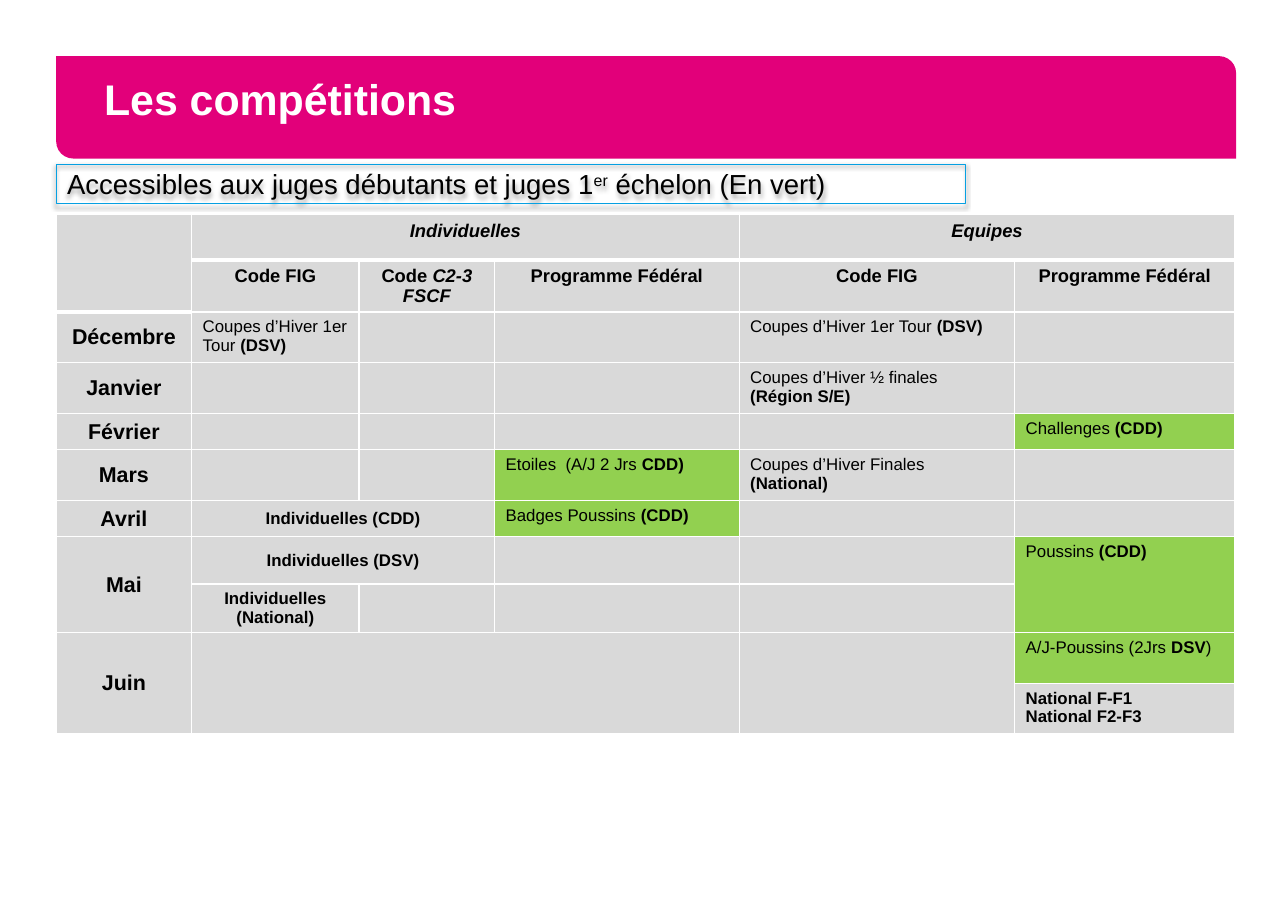
from dataclasses import dataclass

from lxml import etree
from pptx import Presentation
from pptx.dml.color import RGBColor
from pptx.enum import shapes, text
from pptx.oxml import ns
from pptx.util import Inches, Pt


@dataclass(frozen=True)
class Theme:
    font: str = "Arial"
    pink: str = "E2007A"
    blue: str = "06A0E2"
    grey: str = "D9D9D9"
    green: str = "92D050"
    white: str = "FFFFFF"
    black: str = "000000"
    title: int = 28
    subtitle: int = 18
    month: int = 14
    heading: int = 12
    event: int = 11


theme = Theme()


def add_run(paragraph, words, size, color=theme.black, style=""):
    """Add one run; style holds b for bold, i for italic, ^ for superscript."""
    run = paragraph.add_run()
    run.text = words
    font = run.font
    font.name, font.size = theme.font, Pt(size)
    font.bold, font.italic = "b" in style, "i" in style
    font.color.rgb = RGBColor.from_string(color)
    if "^" in style:
        font._element.set("baseline", "30000")


def add_color(parent, tag, color, **attributes):
    """Add a child element to parent and put a colour inside it."""
    element = etree.SubElement(parent, ns.qn(tag), attributes)
    holder = element if tag == "a:outerShdw" else etree.SubElement(element, ns.qn("a:solidFill"))
    return etree.SubElement(holder, ns.qn("a:srgbClr"), val=color)


presentation = Presentation()
presentation.slide_width = Inches(11.69)
presentation.slide_height = Inches(8.27)
slide = presentation.slides.add_slide(presentation.slide_layouts[6])
left, width = Inches(0.51), Inches(10.71)

# Title banner
banner = slide.shapes.add_shape(
    shapes.MSO_SHAPE.ROUND_2_DIAG_RECTANGLE, left, Inches(0.51), width, Inches(0.93))
banner.adjustments[0], banner.adjustments[1] = 0, 0.167
banner.shadow.inherit = False
banner.fill.solid()
banner.fill.fore_color.rgb = RGBColor.from_string(theme.pink)
banner.line.fill.background()
frame = banner.text_frame
frame.word_wrap = True
frame.vertical_anchor = text.MSO_ANCHOR.MIDDLE
frame.margin_left = frame.margin_right = Inches(0.39)
paragraph = frame.paragraphs[0]
paragraph.alignment = text.PP_ALIGN.LEFT
paragraph.line_spacing = Pt(22)
add_run(paragraph, "Les compétitions", theme.title, theme.white, "b")

# Competition calendar
columns = [1.23, 1.52, 1.23, 2.22, 2.5, 2]
rows = [0.41, 0.46, 0.46, 0.46, 0.33, 0.46, 0.33, 0.43, 0.44, 0.46, 0.46]
merges = [(0, 0, 1, 0), (0, 1, 0, 3), (0, 4, 0, 5), (6, 1, 6, 2), (7, 0, 8, 0),
          (7, 1, 7, 2), (7, 5, 8, 5), (9, 0, 10, 0), (9, 1, 10, 3), (9, 4, 10, 4)]
green_cells = {(4, 5), (5, 3), (6, 3), (7, 5), (8, 5), (9, 5)}
thick_bottom = {(0, column) for column in range(6)} | {(1, 0)}
centred_events = {(6, 1), (7, 1), (8, 1)}

# Each cell is a list of paragraphs, each paragraph a list of (words, style)
contents = {
    (0, 1): [[("Individuelles", "bi")]],
    (0, 4): [[("Equipes", "bi")]],
    (1, 1): [[("Code FIG", "b")]],
    (1, 2): [[("Code ", "b"), ("C2-3 FSCF", "bi")]],
    (1, 3): [[("Programme Fédéral", "b")]],
    (1, 4): [[("Code FIG", "b")]],
    (1, 5): [[("Programme Fédéral", "b")]],
    (2, 1): [[("Coupes d’Hiver 1er Tour ", ""), ("(DSV)", "b")]],
    (2, 4): [[("Coupes d’Hiver 1er Tour ", ""), ("(DSV)", "b")]],
    (3, 4): [[("Coupes d’Hiver ½ finales", "")], [("(Région S/E)", "b")]],
    (4, 5): [[("Challenges ", ""), ("(CDD)", "b")]],
    (5, 3): [[("Etoiles  (A/J 2 Jrs ", ""), ("CDD)", "b")]],
    (5, 4): [[("Coupes d’Hiver Finales", "")], [("(National)", "b")]],
    (6, 1): [[("Individuelles (CDD)", "b")]],
    (6, 3): [[("Badges Poussins ", ""), ("(CDD)", "b")]],
    (7, 1): [[("Individuelles (DSV)", "b")]],
    (7, 5): [[("Poussins ", ""), ("(CDD)", "b")]],
    (8, 1): [[("Individuelles (National)", "b")]],
    (9, 5): [[("A/J-Poussins (2Jrs ", ""), ("DSV", "b"), (")", "")]],
    (10, 5): [[("National F-F1", "b")], [("National F2-F3", "b")]],
}
months = {2: "Décembre", 3: "Janvier", 4: "Février", 5: "Mars", 6: "Avril", 7: "Mai", 9: "Juin"}
for row, month in months.items():
    contents[row, 0] = [[(month, "b")]]

table = slide.shapes.add_table(
    len(rows), len(columns), left, Inches(1.95), width, Inches(sum(rows))).table
table.first_row = table.horz_banding = False
for column, size in zip(table.columns, columns):
    column.width = Inches(size)
for row, size in zip(table.rows, rows):
    row.height = Inches(size)
for top, first, bottom, last in merges:
    table.cell(top, first).merge(table.cell(bottom, last))

for row in range(len(rows)):
    for column in range(len(columns)):
        place = (row, column)
        cell = table.cell(row, column)
        properties = cell._tc.get_or_add_tcPr()
        for side in ("L", "R", "T", "B"):
            points = 3 if side == "B" and place in thick_bottom else 1
            add_color(properties, f"a:ln{side}", theme.white, w=str(Pt(points)))
        cell.fill.solid()
        cell.fill.fore_color.rgb = RGBColor.from_string(
            theme.green if place in green_cells else theme.grey)

        if row < 2:
            size = theme.heading
        else:
            size = theme.event if column else theme.month
        middle = column == 0 or place in centred_events
        if middle:
            cell.vertical_anchor = text.MSO_ANCHOR.MIDDLE
        frame = cell.text_frame
        if place not in contents:
            etree.SubElement(frame.paragraphs[0]._p, ns.qn("a:endParaRPr"), sz=str(theme.event * 100))
            continue
        for index, runs in enumerate(contents[place]):
            paragraph = frame.add_paragraph() if index else frame.paragraphs[0]
            if middle or row < 2:
                paragraph.alignment = text.PP_ALIGN.CENTER
            for words, style in runs:
                add_run(paragraph, words, size, style=style)

# Framed subtitle with a soft shadow
subtitle = slide.shapes.add_shape(
    shapes.MSO_SHAPE.RECTANGLE, left, Inches(1.49), Inches(8.25), Inches(0.36))
subtitle.fill.background()
subtitle.line.color.rgb = RGBColor.from_string(theme.blue)
subtitle.line.width = Pt(0.75)
subtitle.shadow.inherit = False
effects = subtitle._element.spPr.find(ns.qn("a:effectLst"))
shadow_color = add_color(effects, "a:outerShdw", theme.black, blurRad=str(Pt(3.1)),
                         dist=str(Pt(1.8)), dir="5400000", rotWithShape="0")
etree.SubElement(shadow_color, ns.qn("a:alpha"), val="35000")
frame = subtitle.text_frame
frame.word_wrap = True
frame.vertical_anchor = text.MSO_ANCHOR.MIDDLE
paragraph = frame.paragraphs[0]
paragraph.alignment = text.PP_ALIGN.LEFT
for words, style in [("Accessibles aux juges débutants et juges 1", ""), ("er", "^"),
                     (" échelon (En vert)", "")]:
    add_run(paragraph, words, theme.subtitle, style=style)

presentation.save("out.pptx")
